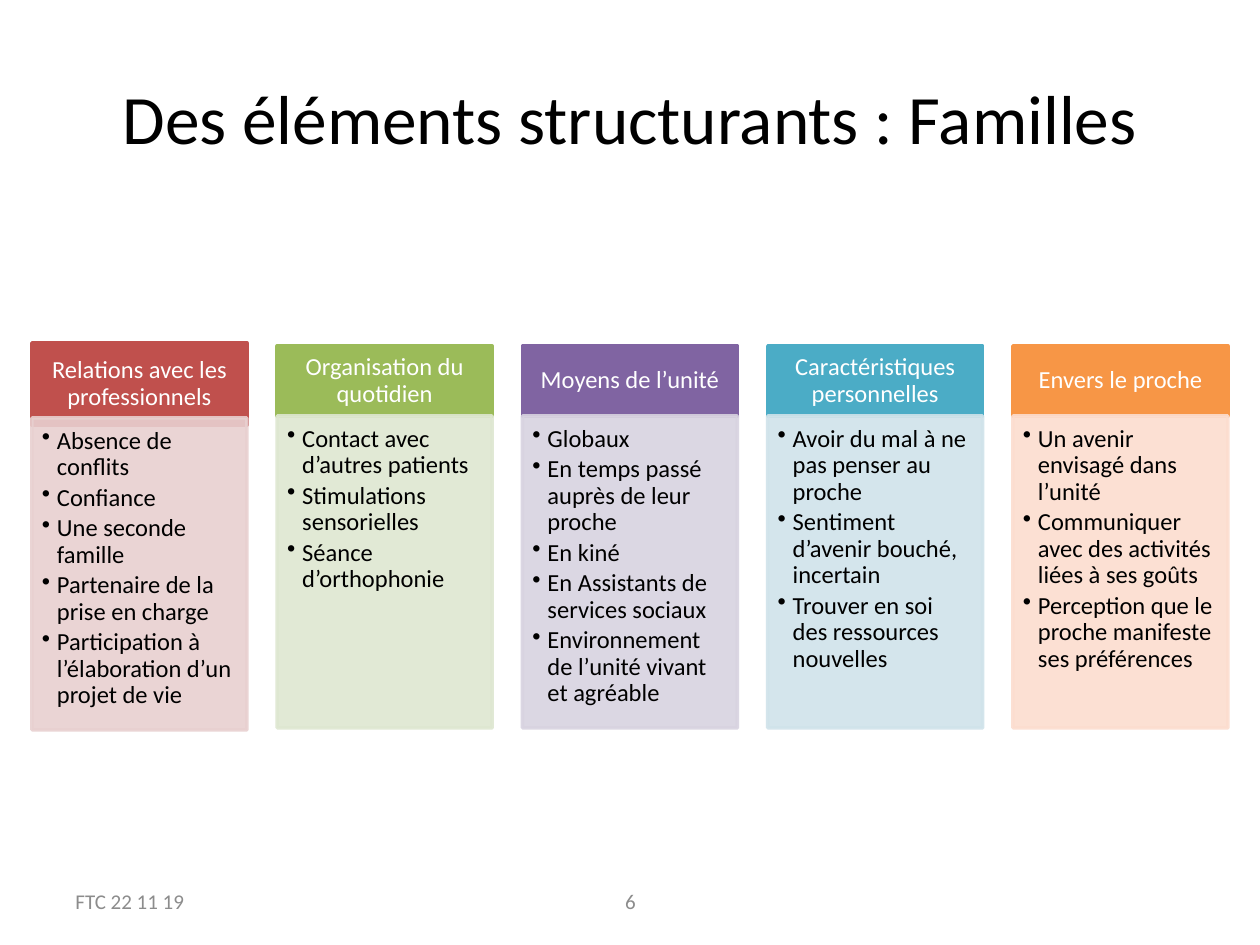
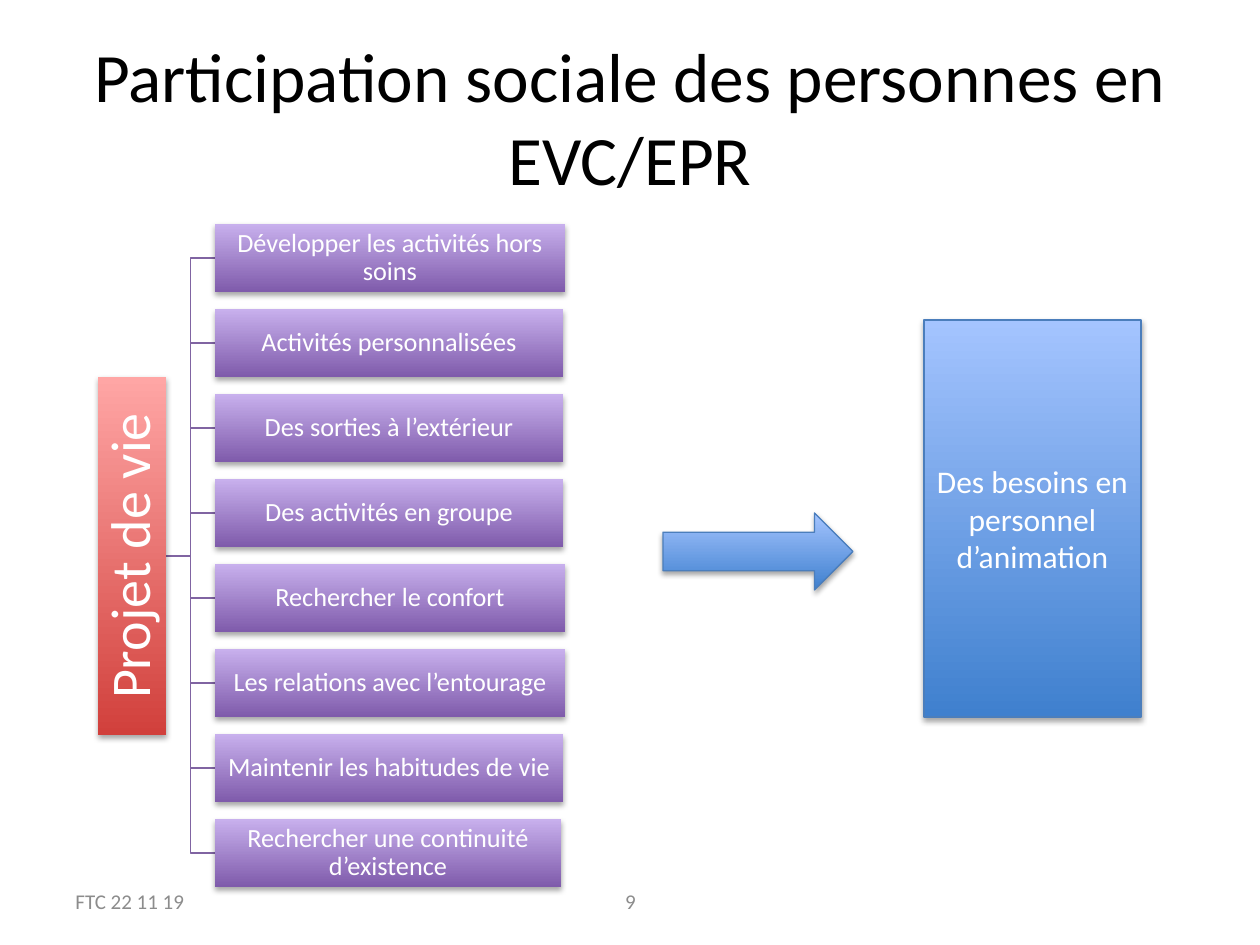
from lxml import etree
from pptx import Presentation
from pptx.dml.color import RGBColor
from pptx.enum.shapes import MSO_SHAPE
from pptx.enum.text import MSO_ANCHOR, PP_ALIGN
from pptx.oxml.ns import qn
from pptx.util import Emu, Pt

FAMILY_COLUMNS = [
    ("Relations avec les professionnels", "C0504D", "E8D0D0", (343, 82, 418),
     ["Absence de conflits", "Confiance", "Une seconde famille",
      "Partenaire de la prise en charge",
      "Participation à l’élaboration d’un projet de vie"]),
    ("Organisation du quotidien", "9BBB59", "DEE7D1", (346, 70, 416),
     ["Contact avec d’autres patients", "Stimulations sensorielles",
      "Séance d’orthophonie"]),
    ("Moyens de l’unité", "8064A2", "D8D3E0", (346, 70, 416),
     ["Globaux", "En temps passé auprès de leur proche", "En kiné",
      "En Assistants de services sociaux",
      "Environnement de l’unité vivant et agréable"]),
    ("Caractéristiques personnelles", "4BACC6", "D0E3EA", (346, 70, 416),
     ["Avoir du mal à ne pas penser au proche",
      "Sentiment d’avenir bouché, incertain",
      "Trouver en soi des ressources nouvelles"]),
    ("Envers le proche", "F79646", "FCDDCF", (346, 70, 416),
     ["Un avenir envisagé dans l’unité",
      "Communiquer avec des activités liées à ses goûts",
      "Perception que le proche manifeste ses préférences"]),
]
LIFE_PROJECT = "Projet de vie"
LIFE_GOALS = [
    ("Développer les activités hors soins", 350),
    ("Activités personnalisées", 348),
    ("Des sorties à l’extérieur", 348),
    ("Des activités en groupe", 348),
    ("Rechercher le confort", 350),
    ("Les relations avec l’entourage", 350),
    ("Maintenir les habitudes de vie", 348),
    ("Rechercher une continuité d’existence", 346),
]
STAFF_NEEDS = "Des besoins en personnel d’animation"
FOOTER = "FTC 22 11 19"

THEME = {
    "font": "Calibri", "title": 39.6, "footer": 12, "column": 14,
    "goal": 15, "needs": 18, "project": 32,
    "black": "000000", "white": "FFFFFF", "grey": "8C8C8C",
    "branch": "8064A2", "edge": "4B7EBC",
    "red": ("D1403C", "FFA6A5"), "purple": ("7F5BAB", "C8B0ED"),
    "blue": ("3F80CE", "A4C4FF"),
}
SLIDE_W, SLIDE_H = 1260, 945
MARGIN, COLUMN_W, COLUMN_H = 32, 215, 312
GOAL_LEFT, GOAL_TOP, GOAL_H, GOAL_PITCH = 215, 224, 68, 85
PROJECT_W, PROJECT_H, PROJECT_CENTER = 358, 68, (132, 556)


def px(v):
    return Emu(round(v * 914400 / 126))


def rgb(c):
    return RGBColor.from_string(c)


def apply(obj, fmt):
    for name, value in fmt.items():
        setattr(obj, name, value)


def insets(left, top, right, bottom):
    sides = ("left", "top", "right", "bottom")
    return {f"margin_{side}": px(v)
            for side, v in zip(sides, (left, top, right, bottom))}


def write(sp, lines, size, color, align=PP_ALIGN.CENTER,
          anchor=MSO_ANCHOR.MIDDLE, margins=None, **spacing):
    tf = sp.text_frame
    apply(tf, {"word_wrap": True, "vertical_anchor": anchor, **(margins or {})})
    for i, line in enumerate(lines):
        p = tf.add_paragraph() if i else tf.paragraphs[0]
        apply(p, {"alignment": align, **spacing})
        r = p.add_run()
        r.text = line
        apply(r.font, {"name": THEME["font"], "size": Pt(size)})
        r.font.color.rgb = rgb(color)
    return tf


def add_bullets(tf):
    for p in tf.paragraphs:
        pPr = p._p.get_or_add_pPr()
        pPr.set("marL", str(px(15)))
        pPr.set("indent", str(-px(15)))
        etree.SubElement(pPr, qn("a:buChar"), char="•")


def add_block(s, kind, box, line=None, width=2):
    sp = s.shapes.add_shape(kind, *map(px, box))
    sp.shadow.inherit = False
    if line:
        sp.line.color.rgb = rgb(line)
        sp.line.width = Pt(width)
    else:
        sp.line.fill.background()
    return sp


def add_flat(s, box, color, opacity=100):
    sp = add_block(s, MSO_SHAPE.RECTANGLE, box, color)
    sp.fill.solid()
    sp.fill.fore_color.rgb = rgb(color)
    if opacity < 100:
        for clr in sp._element.spPr.iter(qn("a:srgbClr")):
            etree.SubElement(clr, qn("a:alpha"), val=str(opacity * 1000))
    return sp


def add_glossy(s, kind, box, colors, line=None, angle=90):
    sp = add_block(s, kind, box, line, 0.75)
    sp.fill.gradient()
    sp.fill.gradient_angle = angle
    for stop, color in zip(sp.fill.gradient_stops, colors):
        stop.color.rgb = rgb(color)
    effects = sp._element.spPr.find(qn("a:effectLst"))
    shadow = etree.SubElement(effects, qn("a:outerShdw"), blurRad="40000",
                              dist="23000", dir="5400000", rotWithShape="0")
    clr = etree.SubElement(shadow, qn("a:srgbClr"), val=THEME["black"])
    etree.SubElement(clr, qn("a:alpha"), val="35000")
    return sp


def add_slide(prs, title, number):
    s = prs.slides.add_slide(prs.slide_layouts[5])
    sp = s.shapes.title
    apply(sp, dict(zip(("left", "top", "width", "height"),
                       map(px, (63, 38, 1134, 157)))))
    write(sp, [title], THEME["title"], THEME["black"])
    for text, left, width, align in ((FOOTER, 63, 294, PP_ALIGN.LEFT),
                                     (number, 431, 399, PP_ALIGN.CENTER)):
        sp = s.shapes.add_textbox(*map(px, (left, 876, width, 50)))
        write(sp, [text], THEME["footer"], THEME["grey"], align)
    return s


def build_families(prs):
    s = add_slide(prs, "Des éléments structurants : Familles", "6")
    pitch = (SLIDE_W - 2 * MARGIN - COLUMN_W) / (len(FAMILY_COLUMNS) - 1)
    for i, (heading, dark, pale, tops, items) in enumerate(FAMILY_COLUMNS):
        left = MARGIN + i * pitch
        head_top, head_h, list_top = tops
        sp = add_flat(s, (left, head_top, COLUMN_W, head_h), dark)
        write(sp, [heading], THEME["column"], THEME["white"],
              margins=insets(14, 8, 14, 8), line_spacing=0.9)
        sp = add_flat(s, (left, list_top, COLUMN_W, COLUMN_H), pale, 90)
        tf = write(sp, items, THEME["column"], THEME["black"], PP_ALIGN.LEFT,
                   MSO_ANCHOR.TOP, insets(10, 10, 14, 15),
                   line_spacing=0.9, space_after=Pt(2.3))
        add_bullets(tf)


def add_branch(s, start, end):
    middle = (start[0] + end[0]) / 2
    points = [(middle, start[1]), (middle, end[1]), end]
    outline = s.shapes.build_freeform(*map(px, start))
    outline.add_line_segments([(px(x), px(y)) for x, y in points], close=False)
    sp = outline.convert_to_shape()
    sp.shadow.inherit = False
    sp.fill.background()
    sp.line.color.rgb = rgb(THEME["branch"])
    sp.line.width = Pt(0.75)


def build_participation(prs):
    s = add_slide(prs, "Participation sociale des personnes en EVC/EPR", "9")
    cx, cy = PROJECT_CENTER
    goal_tops = [GOAL_TOP + i * GOAL_PITCH for i in range(len(LIFE_GOALS))]
    for top in goal_tops:
        add_branch(s, (cx + PROJECT_H / 2, cy), (GOAL_LEFT, top + GOAL_H / 2))

    box = (cx - PROJECT_W / 2, cy - PROJECT_H / 2, PROJECT_W, PROJECT_H)
    sp = add_glossy(s, MSO_SHAPE.RECTANGLE, box, THEME["red"], angle=0)
    sp.rotation = 270
    write(sp, [LIFE_PROJECT], THEME["project"], THEME["white"],
          margins=insets(3, 3, 3, 3), line_spacing=0.9)

    for (goal, width), top in zip(LIFE_GOALS, goal_tops):
        sp = add_glossy(s, MSO_SHAPE.RECTANGLE,
                        (GOAL_LEFT, top, width, GOAL_H), THEME["purple"])
        write(sp, [goal], THEME["goal"], THEME["white"],
              margins=insets(1, 1, 1, 1), line_spacing=0.9)

    sp = add_glossy(s, MSO_SHAPE.RECTANGLE, (924, 320, 217, 397),
                    THEME["blue"], THEME["edge"])
    write(sp, [STAFF_NEEDS], THEME["needs"], THEME["white"])
    add_glossy(s, MSO_SHAPE.RIGHT_ARROW, (663, 513, 190, 77),
               THEME["blue"], THEME["edge"])


def main():
    prs = Presentation()
    apply(prs, {"slide_width": px(SLIDE_W), "slide_height": px(SLIDE_H)})
    build_families(prs)
    build_participation(prs)
    prs.save("out.pptx")


if __name__ == "__main__":
    main()
